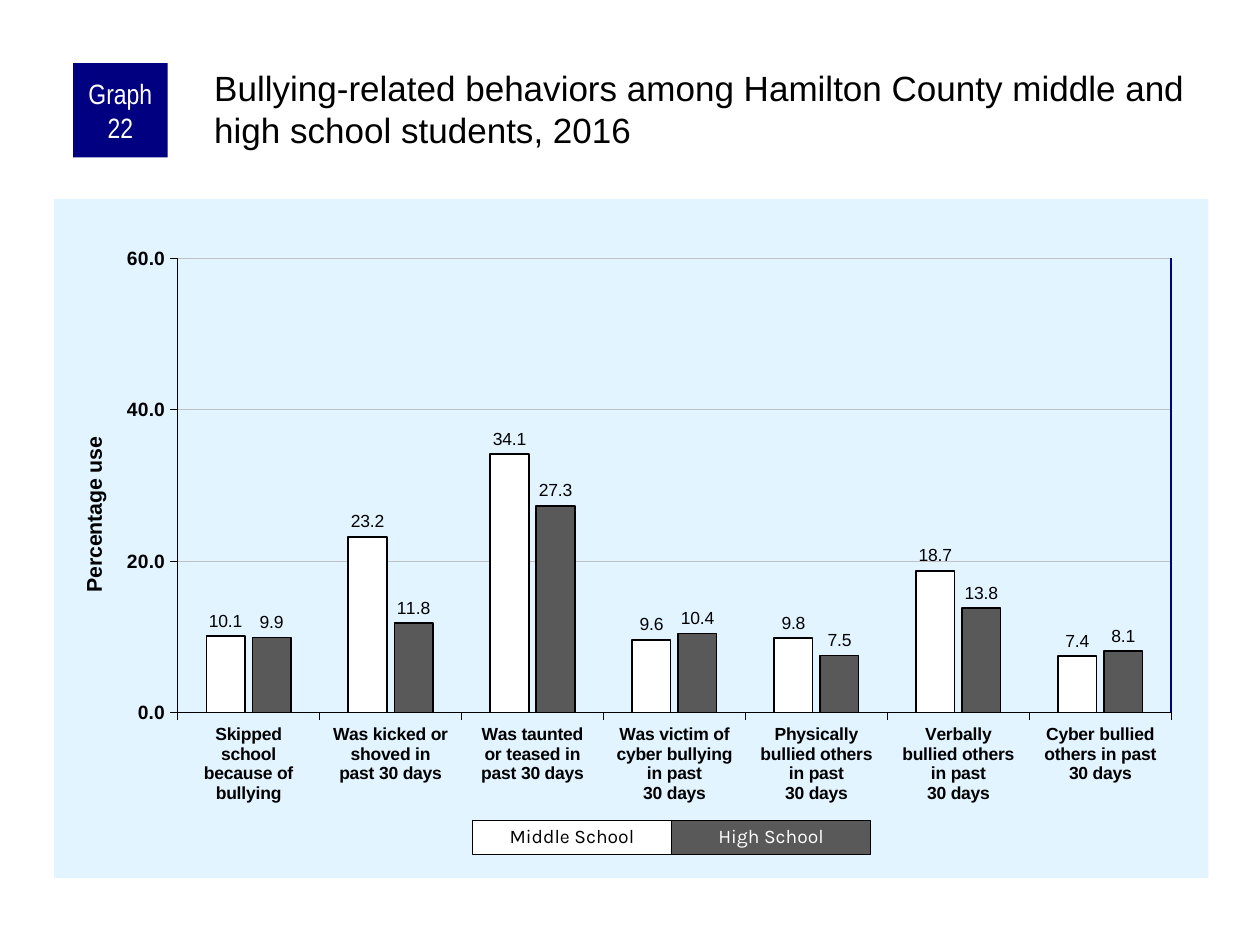
from lxml import etree
from pptx import Presentation
from pptx.chart.data import CategoryChartData
from pptx.dml.color import RGBColor
from pptx.enum.chart import XL_CHART_TYPE as ChartType, XL_LABEL_POSITION as LabelPosition, XL_TICK_MARK as TickMark
from pptx.enum.shapes import MSO_CONNECTOR as Connector, MSO_SHAPE as ShapeType
from pptx.enum.text import MSO_ANCHOR as Anchor, PP_ALIGN as Align
from pptx.oxml import parse_xml
from pptx.oxml.ns import nsdecls, qn
from pptx.util import Inches, Pt

THEME = {
    "font": "Arial", "narrow": "Arial Narrow", "legend": "Karla",
    "black": "000000", "white": "FFFFFF", "navy": "000080",
    "gray": "595959", "grid": "C0C0C0", "panel": "E1F4FF",
    "title_size": 20, "badge_size": 16, "chart_size": 11.5, "axis_title_size": 12.25,
    "axis_size": 11, "small_size": 10, "legend_size": 11,
}

BADGE = "Graph 22"
TITLE = "Bullying-related behaviors among Hamilton County middle and high school students, 2016"
AXIS_TITLE = "Percentage use"
ROWS = [
    ("Skipped\nschool\nbecause of\nbullying", 10.1, 9.9),
    ("Was kicked or\nshoved in\npast 30 days", 23.2, 11.8),
    ("Was taunted\nor teased in\npast 30 days", 34.1, 27.3),
    ("Was victim of\ncyber bullying\nin past\n30 days", 9.6, 10.4),
    ("Physically\nbullied others\nin past\n30 days", 9.8, 7.5),
    ("Verbally\nbullied others\nin past\n30 days", 18.7, 13.8),
    ("Cyber bullied\nothers in past\n30 days", 7.4, 8.1),
]
SERIES = [("Middle School", "white", "black"), ("High School", "gray", "white")]
CHART_BOX = (0.43, 1.58, 9.16, 5.39)
PLOT = {"x": 0.107, "y": 0.087, "w": 0.861, "h": 0.669}


def color(name):
    return RGBColor.from_string(THEME[name])


def set_font(font, size, name="font", fill="black", bold=False):
    font.name = THEME[name]
    font.size = Pt(THEME[size])
    font.bold = bold
    font.color.rgb = color(fill)


def set_line(line, name, width):
    line.color.rgb = color(name)
    line.width = Pt(width)


def write_text(frame, text, size, align=Align.LEFT, anchor=Anchor.TOP,
               insets=(0.1, 0.05, 0.1, 0.05), spacing=None, **font):
    frame.word_wrap = True
    frame.vertical_anchor = anchor
    (frame.margin_left, frame.margin_top,
     frame.margin_right, frame.margin_bottom) = map(Inches, insets)
    paragraph = frame.paragraphs[0]
    paragraph.alignment = align
    paragraph.line_spacing = spacing
    run = paragraph.add_run()
    run.text = text
    set_font(run.font, size, **font)


def add_box(slide, box, fill, line_width=None):
    shape = slide.shapes.add_shape(ShapeType.RECTANGLE, *map(Inches, box))
    shape.shadow.inherit = False
    shape.fill.solid()
    shape.fill.fore_color.rgb = color(fill)
    if line_width:
        set_line(shape.line, "black", line_width)
    else:
        shape.line.fill.background()
    return shape


def manual_layout(values, inner=False):
    target = '<c:layoutTarget val="inner"/>' if inner else ""
    sizes = "".join(f'<c:{key} val="{value}"/>' for key, value in values.items())
    return parse_xml(f'<c:layout {nsdecls("c")}><c:manualLayout>{target}'
                     '<c:xMode val="edge"/><c:yMode val="edge"/>'
                     f'{sizes}</c:manualLayout></c:layout>')


def clear_layout(element):
    for layout in element.findall(qn("c:layout")):
        element.remove(layout)


def add_chart(slide):
    data = CategoryChartData(number_format="0.0")
    data.categories = [row[0] for row in ROWS]
    for index, (name, _, _) in enumerate(SERIES, start=1):
        data.add_series(name, [row[index] for row in ROWS])
    chart = slide.shapes.add_chart(
        ChartType.COLUMN_CLUSTERED, *map(Inches, CHART_BOX), data).chart
    chart.has_legend = False
    chart.has_title = False
    set_font(chart.font, "chart_size")

    plot = chart.plots[0]
    plot.gap_width = 150
    plot.overlap = -20
    plot.vary_by_categories = False
    for series, (_, fill, _) in zip(plot.series, SERIES):
        series.invert_if_negative = False
        series.format.fill.solid()
        series.format.fill.fore_color.rgb = color(fill)
        set_line(series.format.line, "black", 1)
        labels = series.data_labels
        labels.show_value = True
        labels.number_format = "0.0"
        labels.number_format_is_linked = False
        labels.position = LabelPosition.OUTSIDE_END
        set_font(labels.font, "small_size")

    for axis, size in ((chart.category_axis, "small_size"), (chart.value_axis, "axis_size")):
        axis.major_tick_mark = TickMark.OUTSIDE
        axis.minor_tick_mark = TickMark.NONE
        set_line(axis.format.line, "black", 0.25)
        set_font(axis.tick_labels.font, size, bold=True)

    values = chart.value_axis
    values.minimum_scale, values.maximum_scale, values.major_unit = 0, 60, 20
    values.tick_labels.number_format = "0.0"
    values.tick_labels.number_format_is_linked = False
    set_line(values.major_gridlines.format.line, "grid", 0.25)
    run = values.axis_title.text_frame.paragraphs[0].add_run()
    run.text = AXIS_TITLE
    set_font(run.font, "axis_title_size", bold=True)

    title = values.axis_title._element
    clear_layout(title)
    title.find(qn("c:tx")).addnext(manual_layout({"x": 0.02, "y": 0.345}))
    chart_element = chart._chartSpace.find(qn("c:chart"))
    plot_area = chart_element.find(qn("c:plotArea"))
    clear_layout(plot_area)
    plot_area.insert(0, manual_layout(PLOT, inner=True))
    chart_element.addnext(parse_xml(
        f'<c:spPr {nsdecls("c", "a")}><a:solidFill><a:srgbClr val="{THEME["panel"]}"/>'
        '</a:solidFill><a:ln><a:noFill/></a:ln></c:spPr>'))


def add_plot_edge(slide):
    left, top, width, height = CHART_BOX
    x = left + width * (PLOT["x"] + PLOT["w"])
    y = top + height * PLOT["y"]
    edge = slide.shapes.add_connector(
        Connector.STRAIGHT, *map(Inches, (x, y, x, y + height * PLOT["h"])))
    set_line(edge.line, "navy", 1.25)
    etree.SubElement(edge._element.spPr, qn("a:effectLst"))


def main():
    presentation = Presentation()
    presentation.slide_width, presentation.slide_height = Inches(10), Inches(7.5)
    slide = presentation.slides.add_slide(presentation.slide_layouts[6])

    add_chart(slide)
    add_plot_edge(slide)
    badge = add_box(slide, (0.58, 0.5, 0.75, 0.75), "navy")
    write_text(badge.text_frame, BADGE, "badge_size", align=Align.CENTER, anchor=Anchor.MIDDLE,
               insets=(0.05, 0, 0.05, 0), name="narrow", fill="white")
    heading = slide.shapes.add_textbox(*map(Inches, (1.67, 0.5, 7.92, 0.83)))
    write_text(heading.text_frame, TITLE, "title_size", insets=(0.03, 0.03, 0, 0))

    width = 1.58
    for index, (name, fill, text_fill) in enumerate(SERIES):
        key = add_box(slide, (3.75 + index * width, 6.51, width, 0.27), fill, 0.75)
        write_text(key.text_frame, name, "legend_size", align=Align.CENTER, anchor=Anchor.MIDDLE,
                   spacing=0.9, name="legend", fill=text_fill)

    presentation.save("out.pptx")


if __name__ == "__main__":
    main()
